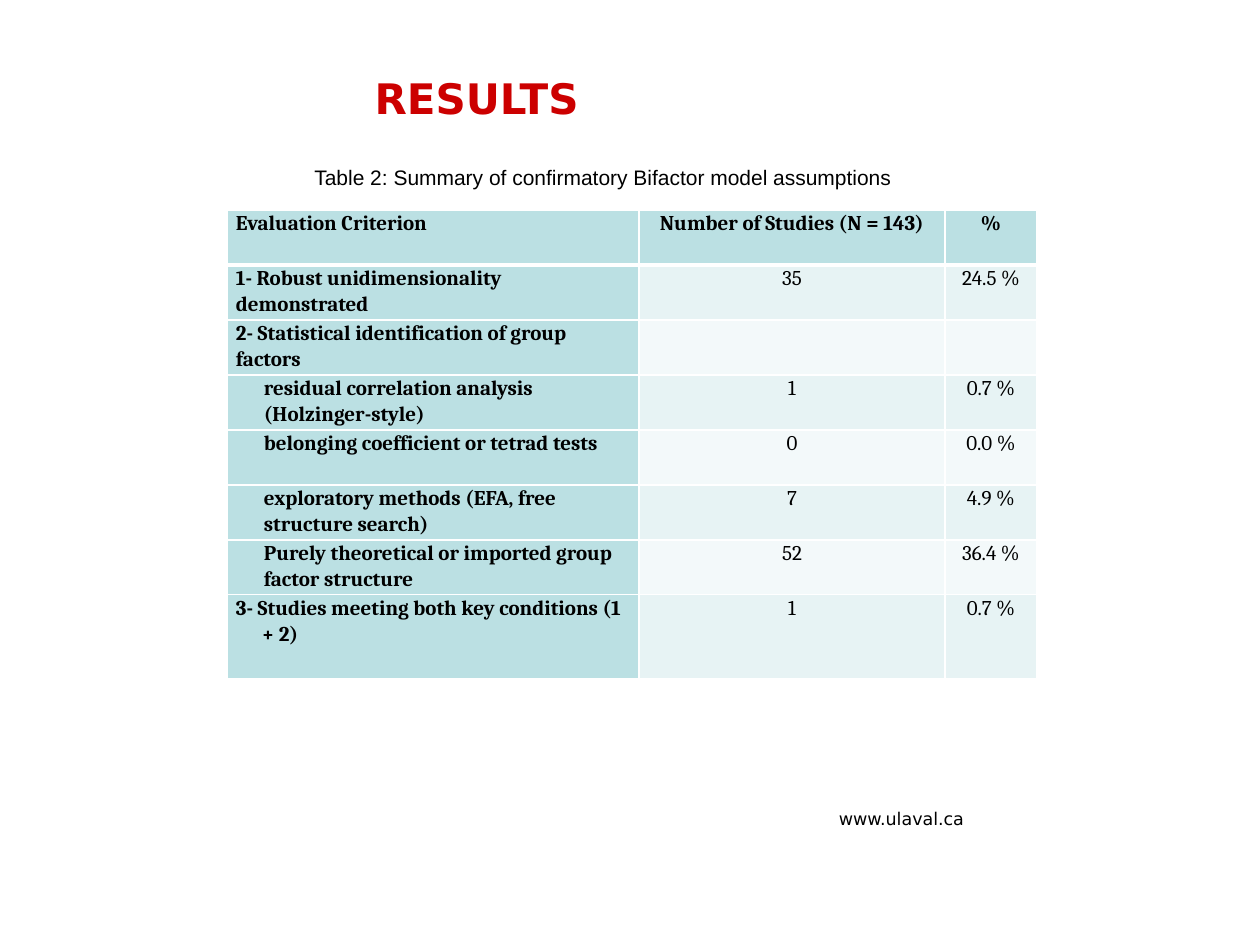
from lxml import etree
from pptx import Presentation
from pptx.dml.color import RGBColor
from pptx.enum.text import MSO_ANCHOR as ANCHOR, MSO_AUTO_SIZE as AUTO, PP_ALIGN as ALIGN
from pptx.oxml.ns import qn
from pptx.util import Pt

PX = 914400 / 126
WHITE = RGBColor(0xFF, 0xFF, 0xFF)
BLACK = RGBColor(0x00, 0x00, 0x00)
RED = RGBColor(0xCC, 0x00, 0x00)
TEAL = RGBColor(0xBB, 0xE0, 0xE3)
BAND_DARK = RGBColor(0xE7, 0xF3, 0xF4)
BAND_LIGHT = RGBColor(0xF3, 0xF9, 0xFA)

SUB_ITEM, HANGING = (28, 0), (26, -26)  # left margin and first-line indent
COLUMNS = [412, 306, 92]
ROW_HEIGHTS = [55] * 7 + [84]
ROWS = [
    ("Evaluation Criterion", "Number of Studies (N = 143)", "%"),
    ("1- Robust unidimensionality demonstrated", "35", "24.5 %"),
    ("2- Statistical identification of group factors", "", ""),
    ("residual correlation analysis (Holzinger-style)", "1", "0.7 %"),
    ("belonging coefficient or tetrad tests", "0", "0.0 %"),
    ("exploratory methods (EFA, free structure search)", "7", "4.9 %"),
    ("Purely theoretical or imported group factor structure", "52", "36.4 %"),
    ("3- Studies meeting both key conditions (1 + 2)", "1", "0.7 %"),
]
INDENTS = {3: SUB_ITEM, 4: SUB_ITEM, 5: SUB_ITEM, 6: SUB_ITEM, 7: HANGING}


def px(n):
    return round(n * PX)


def set_all(obj, values):
    for name, value in values.items():
        setattr(obj, name, value)


class SlideBuilder:
    TITLE = dict(name="DejaVu Sans", size=Pt(24), bold=True)
    CAPTION = dict(name="Arial", size=Pt(12))
    FOOTER = dict(name="DejaVu Sans", size=Pt(10))
    CELL = dict(name="Cambria", size=Pt(12))
    CELL_PARAGRAPH = dict(line_spacing=1.07, space_after=Pt(8))
    CELL_MARGINS = dict(margin_left=px(9), margin_right=px(9), margin_top=0, margin_bottom=0)

    def __init__(self, slide):
        self.s = slide

    def paragraph(self, tf, text, font, color=BLACK, align=ALIGN.LEFT):
        p = tf.paragraphs[0]
        p.alignment = align
        if text:
            r = p.add_run()
            r.text = text
            set_all(r.font, font)
            r.font.color.rgb = color
        return p

    def title(self, text, *box):
        sp = self.s.shapes.title
        set_all(sp, dict(zip(("left", "top", "width", "height"), map(px, box))))
        set_all(sp.text_frame, dict(auto_size=AUTO.NONE, vertical_anchor=ANCHOR.TOP))
        self.paragraph(sp.text_frame, text, self.TITLE, RED)

    def text(self, text, box, font, **frame):
        tf = self.s.shapes.add_textbox(*map(px, box)).text_frame
        set_all(tf, dict(word_wrap=False) | frame)
        self.paragraph(tf, text, font)

    def borders(self, cell, **widths):
        """Draw white borders; widths in points are keyed by side: L, R, T, B."""
        tc_pr = cell._tc.get_or_add_tcPr()
        for side, width in widths.items():
            ln = etree.SubElement(tc_pr, qn(f"a:ln{side}"), w=str(int(Pt(width))))
            fill = etree.SubElement(ln, qn("a:solidFill"))
            etree.SubElement(fill, qn("a:srgbClr"), val=str(WHITE))

    def cell(self, cell, text, row, col):
        header, label = row == 0, col == 0
        self.borders(cell, L=1, R=1, T=3 if row == 1 else 1, B=3 if header else 1)
        cell.fill.solid()
        band = BAND_DARK if row % 2 else BAND_LIGHT
        cell.fill.fore_color.rgb = TEAL if header or label else band
        set_all(cell, self.CELL_MARGINS)
        p = self.paragraph(cell.text_frame, text, self.CELL | dict(bold=header or label),
                           align=ALIGN.LEFT if label else ALIGN.CENTER)
        set_all(p, self.CELL_PARAGRAPH)
        if label and row in INDENTS:
            margin, indent = INDENTS[row]
            p_pr = p._p.get_or_add_pPr()
            p_pr.set("marL", str(px(margin)))
            p_pr.set("indent", str(px(indent)))

    def table(self, left, top, rows, widths, heights):
        box = map(px, (left, top, sum(widths), sum(heights)))
        table = self.s.shapes.add_table(len(rows), len(widths), *box).table
        for column, width in zip(table.columns, widths):
            column.width = px(width)
        for i, (row, height) in enumerate(zip(rows, heights)):
            table.rows[i].height = px(height)
            for j, text in enumerate(row):
                self.cell(table.cell(i, j), text, i, j)


def main():
    prs = Presentation()
    prs.slide_width, prs.slide_height = px(1260), px(945)
    b = SlideBuilder(prs.slides.add_slide(prs.slide_layouts[5]))
    b.title("RESULTS", 362, 66, 566, 63)
    b.text("Table 2: Summary of confirmatory Bifactor model assumptions",
           (302, 159, 603, 37), b.CAPTION, vertical_anchor=ANCHOR.MIDDLE)
    b.table(227, 210, ROWS, COLUMNS, ROW_HEIGHTS)
    b.text("www.ulaval.ca", (839, 808, 174, 21), b.FOOTER,
           margin_left=0, margin_right=0, margin_top=0, margin_bottom=0, word_wrap=True)
    prs.save("out.pptx")


if __name__ == "__main__":
    main()
